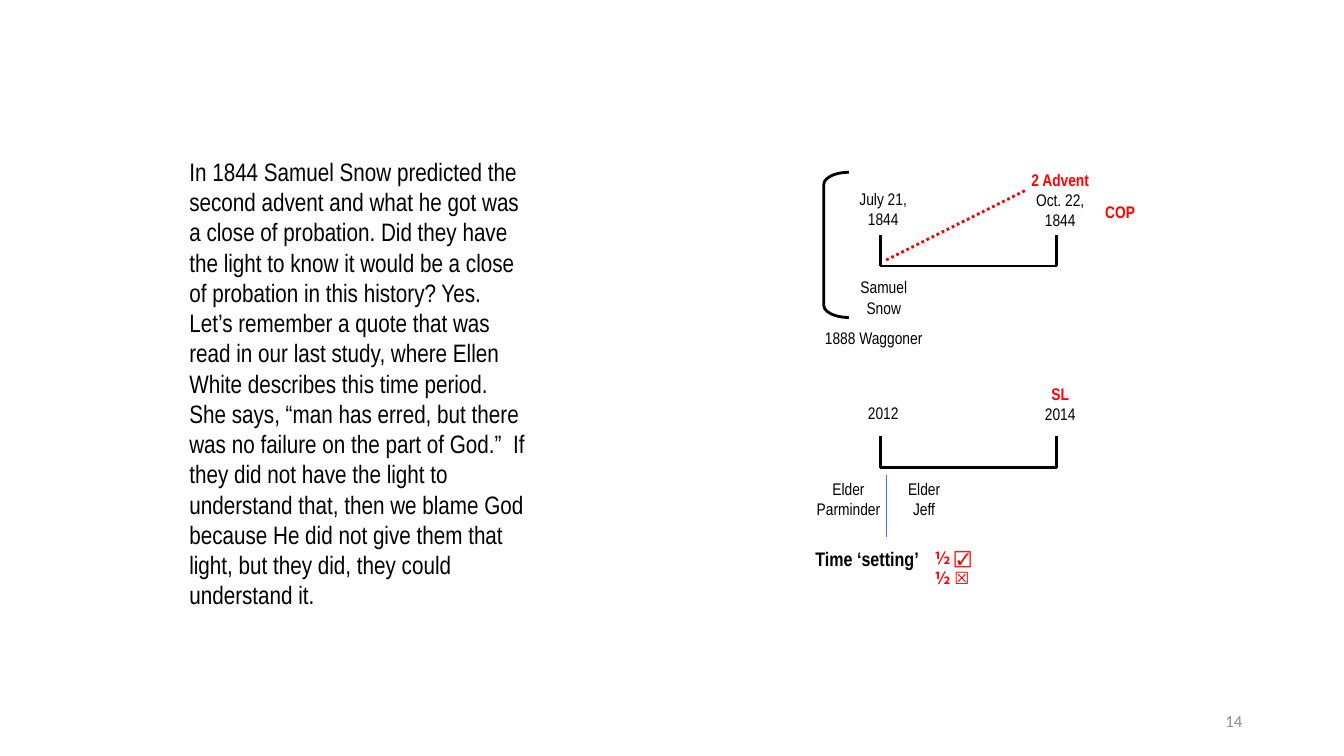
from pptx import Presentation
from pptx.dml.color import RGBColor
from pptx.enum.dml import MSO_LINE
from pptx.enum.shapes import MSO_CONNECTOR, MSO_SHAPE
from pptx.enum.text import MSO_ANCHOR, PP_ALIGN
from pptx.oxml.ns import qn
from pptx.util import Pt
from lxml import etree

STRAIGHT = MSO_CONNECTOR.STRAIGHT
BRACKET = MSO_SHAPE.LEFT_BRACKET
DOTTED = MSO_LINE.ROUND_DOT
LEFT, CENTER, RIGHT = PP_ALIGN.LEFT, PP_ALIGN.CENTER, PP_ALIGN.RIGHT
TOP, MIDDLE = MSO_ANCHOR.TOP, MSO_ANCHOR.MIDDLE

PX_PER_INCH = 100
SCALE = 914400 // PX_PER_INCH
BLACK, RED, BLUE, GRAY = "000000", "FF0000", "4472C4", "8C8C8C"
NARROW = "Arial Narrow"

PLAIN = {"size": Pt(12), "name": NARROW, "bold": False, "color": BLACK}
ALERT = {**PLAIN, "bold": True, "color": RED}
HEADING = {**PLAIN, "size": Pt(14), "bold": True}
BODY = {**PLAIN, "size": Pt(18)}
NUMBER = {**PLAIN, "name": "Calibri", "color": GRAY}
HALF = {**ALERT, "name": "Noto Sans CJK JP"}
MARK = {**PLAIN, "name": "Arial", "color": RED}

QUOTE = (
    "In 1844 Samuel Snow predicted the second advent and what he got was a close of "
    "probation. Did they have the light to know it would be a close of probation in this "
    "history? Yes.  Let’s remember a quote that was read in our last study, where Ellen "
    "White describes this time period. She says, “man has erred, but there was no failure "
    "on the part of God.”  If they did not have the light to understand that, then we blame "
    "God because He did not give them that light, but they did, they could understand it."
)


def px(length):
    return length * SCALE


def color(value):
    return RGBColor.from_string(value)


def add_text(page, box, lines, align=CENTER, anchor=TOP, inset=(4, 4)):
    shape = page.shapes.add_textbox(*map(px, box))
    frame = shape.text_frame
    side, edge = map(px, inset)
    settings = {
        "word_wrap": True, "vertical_anchor": anchor,
        "margin_left": side, "margin_right": side,
        "margin_top": edge, "margin_bottom": edge,
    }
    for key, value in settings.items():
        setattr(frame, key, value)
    for index, spans in enumerate(lines):
        para = frame.add_paragraph() if index else frame.paragraphs[0]
        para.alignment = align
        for text, style in spans:
            span = para.add_run()
            span.text = text
            for key, value in style.items():
                if key == "color":
                    span.font.color.rgb = color(value)
                else:
                    setattr(span.font, key, value)


def add_line(page, start, end, stroke=BLACK, width=2, dash=None):
    line = page.shapes.add_connector(STRAIGHT, *map(px, (*start, *end)))
    line.line.color.rgb = color(stroke)
    line.line.width = Pt(width)
    if dash is not None:
        line.line.dash_style = dash
    etree.SubElement(line._element.spPr, qn("a:effectLst"))


def add_timeline(page, left, base, span=175, tick=31):
    add_line(page, (left, base), (left + span, base))
    for x in (left, left + span):
        add_line(page, (x, base - tick), (x, base))


def add_advent_history(page, left, top):
    add_timeline(page, left + 69, top + 100)
    bracket = page.shapes.add_shape(BRACKET, *map(px, (left + 13, top + 7, 25, 144)))
    bracket.adjustments[0] = 0.48
    bracket.shadow.inherit = False
    bracket.fill.background()
    bracket.line.color.rgb = color(BLACK)
    bracket.line.width = Pt(2)
    labels = [
        ((44, 19, 56, 50), [[("July 21, 1844", PLAIN)]]),
        ((38, 107, 69, 50), [[("Samuel Snow", PLAIN)]]),
        ((213, 0, 69, 69), [[("2 Advent", ALERT)], [("Oct. 22, 1844", PLAIN)]]),
        ((0, 157, 125, 31), [[("1888 Waggoner", PLAIN)]]),
        ((282, 32, 50, 38), [[("COP", ALERT)]]),
    ]
    add_labels(page, left, top, labels)
    add_line(page, (left + 75, top + 94), (left + 213, top + 25), RED, dash=DOTTED)


def add_elders_history(page, left, top):
    add_timeline(page, left + 69, top + 100)
    labels = [
        ((44, 32, 56, 38), [[("2012", PLAIN)]]),
        ((213, 13, 69, 56), [[("SL", ALERT)], [("2014", PLAIN)]]),
        ((0, 107, 75, 62), [[("Elder", PLAIN)], [("Parminder", PLAIN)]]),
        ((75, 107, 75, 62), [[("Elder", PLAIN)], [("Jeff", PLAIN)]]),
        ((0, 175, 112, 31), [[("Time ‘setting’", HEADING)]]),
    ]
    add_labels(page, left, top, labels)
    halves = [[("½ ", HALF), (mark, MARK)] for mark in "☑☒"]
    add_text(page, (left + 119, top + 175, 56, 75), halves, LEFT)
    add_line(page, (left + 75, top + 107), (left + 75, top + 169), BLUE, 0.5)


def add_labels(page, left, top, labels):
    for (x, y, width, height), lines in labels:
        add_text(page, (left + x, top + y, width, height), lines)


def main():
    deck = Presentation()
    deck.slide_width, deck.slide_height = px(1333), px(750)
    page = deck.slides.add_slide(deck.slide_layouts[6])
    add_text(page, (942, 695, 300, 40), [[("14", NUMBER)]], RIGHT, MIDDLE, (10, 5))
    add_advent_history(page, 804, 164)
    add_elders_history(page, 804, 364)
    add_text(page, (178, 150, 357, 515), [[(QUOTE, BODY)]], LEFT, inset=(10, 5))
    deck.save("out.pptx")


if __name__ == "__main__":
    main()
